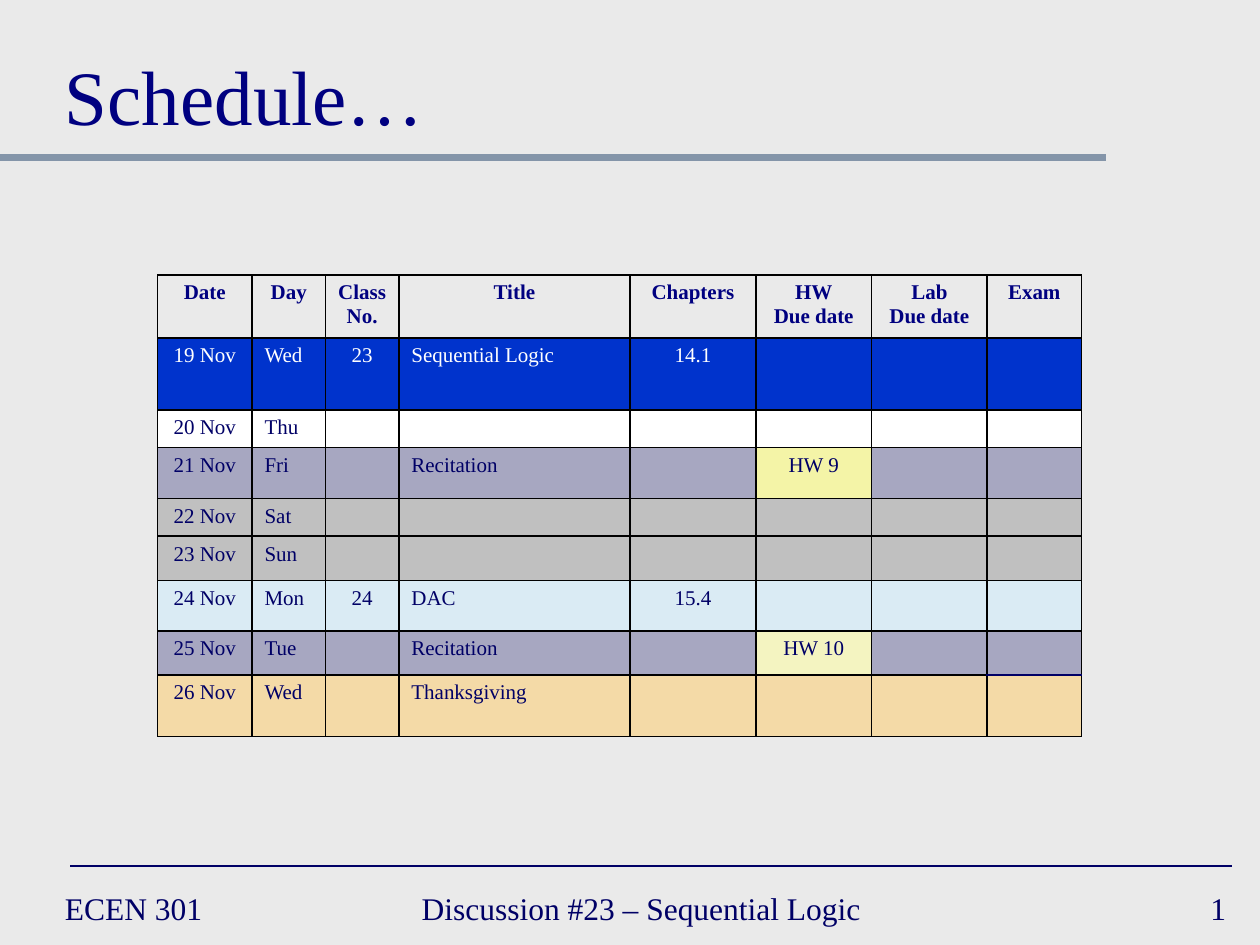
from lxml.etree import SubElement
from pptx import Presentation
from pptx.dml.color import RGBColor
from pptx.enum.shapes import MSO_CONNECTOR
from pptx.enum.text import MSO_ANCHOR, PP_ALIGN
from pptx.oxml.ns import qn
from pptx.util import Cm, Pt

FONT = "Times New Roman"
NAVY = "000080"
INK = "000066"
COLUMN_WIDTHS = [1.9, 1.48, 1.48, 4.66, 2.54, 2.33, 2.33, 1.9]
CENTERED_COLUMNS = {0, 2, 4, 5, 6, 7}
HEADINGS = ["Date", "Day", "Class\nNo.", "Title", "Chapters",
            "HW\nDue date", "Lab\nDue date", "Exam"]
HOMEWORK_COLUMN = 5
HOMEWORK_FILLS = {"HW 9": "FFFF66", "HW 10": "FFFF99"}
DAYS = [
    (1.45, "0033CC", 100, ["19 Nov", "Wed", "23", "Sequential Logic", "14.1", ""]),
    (0.76, "FFFFFF", 100, ["20 Nov", "Thu", "", "", "", ""]),
    (1.02, "666699", 50, ["21 Nov", "Fri", "", "Recitation", "", "HW 9"]),
    (0.76, "C0C0C0", 100, ["22 Nov", "Sat", "", "", "", ""]),
    (0.89, "C0C0C0", 100, ["23 Nov", "Sun", "", "", "", ""]),
    (1.02, "CCECFF", 50, ["24 Nov", "Mon", "24", "DAC", "15.4", ""]),
    (0.89, "666699", 50, ["25 Nov", "Tue", "", "Recitation", "", "HW 10"]),
    (1.24, "FFCC66", 50, ["26 Nov", "Wed", "", "Thanksgiving", "", ""]),
]


def color(value):
    """Return the colour of a hex string."""
    return RGBColor.from_string(value)


def style_paragraph(paragraph, size, value, alignment=PP_ALIGN.LEFT, bold=False):
    """Set the alignment and font of a paragraph."""
    paragraph.alignment = alignment
    paragraph.font.name = FONT
    paragraph.font.size = Pt(size)
    paragraph.font.bold = bold
    paragraph.font.color.rgb = color(value)


def add_text(slide, text, box, size, value, anchor=MSO_ANCHOR.MIDDLE,
             alignment=PP_ALIGN.LEFT):
    """Add a one-paragraph text box."""
    frame = slide.shapes.add_textbox(*map(Cm, box)).text_frame
    frame.word_wrap = True
    frame.vertical_anchor = anchor
    frame.text = text
    style_paragraph(frame.paragraphs[0], size, value, alignment)


def add_rule(slide, left, right, top, value, width):
    """Add a horizontal line."""
    line = slide.shapes.add_connector(
        MSO_CONNECTOR.STRAIGHT, Cm(left), Cm(top), Cm(right), Cm(top))
    line.line.color.rgb = color(value)
    line.line.width = Pt(width)
    SubElement(line._element.spPr, qn("a:effectLst"))


def set_borders(cell, top="000000", bottom="000000"):
    """Give a cell thin borders on all sides."""
    properties = cell._tc.get_or_add_tcPr()
    sides = {"lnL": "000000", "lnR": "000000", "lnT": top, "lnB": bottom}
    for side, value in sides.items():
        border = SubElement(properties, qn(f"a:{side}"), w=str(Pt(1)))
        fill = SubElement(border, qn("a:solidFill"))
        SubElement(fill, qn("a:srgbClr"), val=value)


def set_fill(cell, value, opacity):
    """Fill a cell, with opacity in percent."""
    cell.fill.solid()
    cell.fill.fore_color.rgb = color(value)
    if opacity < 100:
        fill_color = cell._tc.tcPr.find(qn("a:solidFill"))[0]
        SubElement(fill_color, qn("a:alpha"), val=str(opacity * 1000))


def write_cell(cell, text, value, centered, bold=False):
    """Write the paragraphs of a cell."""
    cell.text = text
    alignment = PP_ALIGN.CENTER if centered else PP_ALIGN.LEFT
    for paragraph in cell.text_frame.paragraphs:
        style_paragraph(paragraph, 12, value, alignment, bold)
        if not text:
            SubElement(paragraph._p, qn("a:endParaRPr"), sz="1200")


def add_schedule(slide):
    """Add the schedule table."""
    heights = [1.24] + [day[0] for day in DAYS]
    table = slide.shapes.add_table(
        len(heights), len(COLUMN_WIDTHS), Cm(3.18), Cm(5.54),
        Cm(sum(COLUMN_WIDTHS)), Cm(sum(heights))).table
    table.first_row = False
    table.horz_banding = False
    for column, width in zip(table.columns, COLUMN_WIDTHS):
        column.width = Cm(width)
    for row, height in zip(table.rows, heights):
        row.height = Cm(height)

    for index, heading in enumerate(HEADINGS):
        cell = table.cell(0, index)
        set_borders(cell)
        cell.fill.background()
        write_cell(cell, heading, NAVY, True, True)

    last_row, last_column = len(DAYS), len(COLUMN_WIDTHS) - 1
    for row, (_, fill, opacity, texts) in enumerate(DAYS, 1):
        text_color = "FFFFFF" if row == 1 else INK
        for index in range(len(COLUMN_WIDTHS)):
            cell = table.cell(row, index)
            text = texts[index] if index < len(texts) else ""
            at_end = index == last_column
            set_borders(
                cell,
                top=INK if at_end and row == last_row else "000000",
                bottom=INK if at_end and row == last_row - 1 else "000000")
            cell_fill = fill
            if index == HOMEWORK_COLUMN:
                cell_fill = HOMEWORK_FILLS.get(text, fill)
            set_fill(cell, cell_fill, opacity)
            write_cell(cell, text, text_color, index in CENTERED_COLUMNS)


def main():
    """Build and save the slide."""
    presentation = Presentation()
    presentation.slide_width, presentation.slide_height = Cm(25.4), Cm(19.05)
    slide = presentation.slides.add_slide(presentation.slide_layouts[6])
    slide.background.fill.solid()
    slide.background.fill.fore_color.rgb = color("EAEAEA")

    add_rule(slide, 0, 22.3, 3.17, "8495A9", 4)
    add_rule(slide, 1.42, 24.84, 17.46, INK, 1)
    add_text(slide, "ECEN 301", (1.06, 17.78, 5.5, 1.06), 18, INK)
    add_text(slide, "Discussion #23 – Sequential Logic",
             (8.25, 17.78, 9.74, 1.06), 18, INK)
    add_text(slide, "1", (19.69, 17.78, 5.28, 1.06), 18, INK,
             alignment=PP_ALIGN.RIGHT)
    add_schedule(slide)
    add_text(slide, "Schedule…", (1.06, 0.42, 23.5, 2.54), 44, NAVY,
             anchor=MSO_ANCHOR.BOTTOM)
    presentation.save("out.pptx")


if __name__ == "__main__":
    main()
